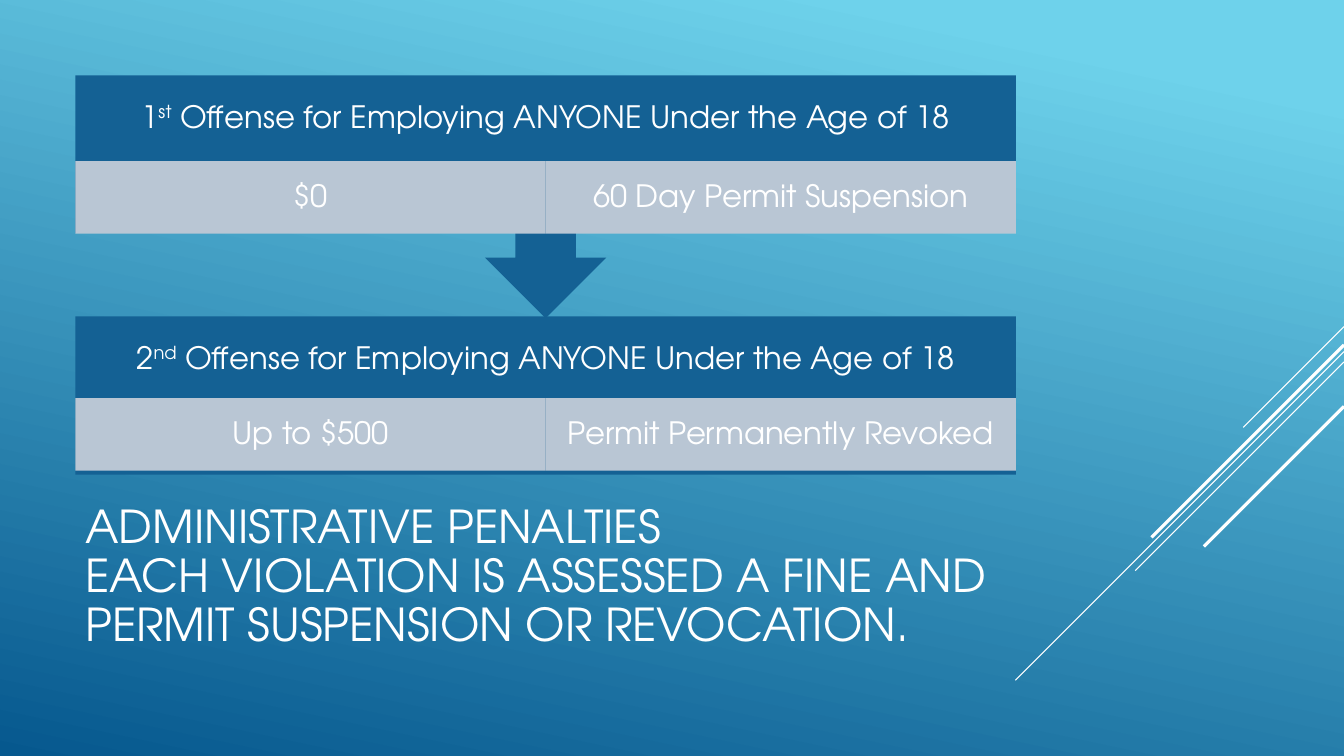
import pptx
import pptx.dml.color
import pptx.enum.shapes
import pptx.enum.text
import pptx.oxml
import pptx.oxml.ns
import pptx.util

Cm = pptx.util.Cm
Pt = pptx.util.Pt
SHAPE = pptx.enum.shapes.MSO_SHAPE
ALIGN = pptx.enum.text.PP_ALIGN
NAMESPACE = pptx.oxml.ns.nsdecls("a")


def color(value):
    return pptx.dml.color.RGBColor.from_string(value)


class PenaltySlide:
    FONT = "TeX Gyre Adventor"
    WHITE = "FFFFFF"
    BLUE = "146194"
    GRAY = "CCD2DC"
    WIDTH = 33.87
    HEIGHT = 19.05

    def __init__(self):
        self.deck = pptx.Presentation()
        self.deck.slide_width = Cm(self.WIDTH)
        self.deck.slide_height = Cm(self.HEIGHT)
        self.page = self.deck.slides.add_slide(self.deck.slide_layouts[6])

    def background(self, stops, angle):
        fill = self.page.background.fill
        fill.gradient()
        fill.gradient_angle = angle
        for stop, (position, value) in zip(fill.gradient_stops, stops):
            stop.position = position
            stop.color.rgb = color(value)

    def diagonal(self, top, reach, weight):
        """Draw a 45 degree line down and left from the right edge."""
        line = self.page.shapes.add_connector(
            pptx.enum.shapes.MSO_CONNECTOR.STRAIGHT,
            Cm(self.WIDTH), Cm(top), Cm(self.WIDTH - reach), Cm(top + reach))
        line.line.color.rgb = color(self.WHITE)
        line.line.width = Pt(weight)
        line._element.spPr.append(
            pptx.oxml.parse_xml(f"<a:effectLst {NAMESPACE}/>"))

    def panel(self, kind, left, top, width, height, fill, opacity=100):
        box = self.page.shapes.add_shape(
            kind, Cm(left), Cm(top), Cm(width), Cm(height))
        box.shadow.inherit = False
        box.line.fill.background()
        box.fill.solid()
        box.fill.fore_color.rgb = color(fill)
        if opacity < 100:
            tint = box._element.spPr.find(".//" + pptx.oxml.ns.qn("a:srgbClr"))
            tint.append(pptx.oxml.parse_xml(
                f'<a:alpha {NAMESPACE} val="{opacity * 1000}"/>'))
        return box

    def text_box(self, left, top, width, height):
        return self.page.shapes.add_textbox(
            Cm(left), Cm(top), Cm(width), Cm(height))

    def style_text(self, box, size, align, spacing, inset_x, inset_y):
        """Style the box's only paragraph and return it."""
        frame = box.text_frame
        frame.word_wrap = True
        frame.vertical_anchor = pptx.enum.text.MSO_ANCHOR.MIDDLE
        frame.margin_left = frame.margin_right = Cm(inset_x)
        frame.margin_top = frame.margin_bottom = Cm(inset_y)
        para = frame.paragraphs[0]
        para.alignment = align
        para.line_spacing = spacing
        para.font.name = self.FONT
        para.font.size = Pt(size)
        para.font.color.rgb = color(self.WHITE)
        return para

    def heading(self, left, top, width, height, number, ordinal):
        box = self.text_box(left, top, width, height)
        para = self.style_text(box, 22, ALIGN.CENTER, 0.9, 0.43, 0.43)
        para.add_run().text = number
        span = para.add_run()
        span.text = ordinal
        span._r.get_or_add_rPr().set("baseline", "30000")
        para.add_run().text = " Offense for Employing ANYONE Under the Age of 18"

    def penalties(self, left, top, width, height, labels):
        cell_width = width / len(labels)
        for column, label in enumerate(labels):
            cell = self.panel(SHAPE.RECTANGLE, left + column * cell_width, top,
                              cell_width, height, self.GRAY, 90)
            para = self.style_text(cell, 22, ALIGN.CENTER, 0.9, 0.43, 0.08)
            para.text = label

    def title(self, left, top, width, height, text):
        box = self.text_box(left, top, width, height)
        para = self.style_text(box, 32.4, ALIGN.LEFT, 0.9, 0.25, 0.13)
        para.text = text


def main():
    slide = PenaltySlide()
    left, width = 1.9, 23.7
    heading_height, cell_height = 2.16, 1.83

    # Background and diagonal accents
    slide.background([(0.1, "6ED2EB"), (1.0, "06588E")], 258)
    for top, reach, weight in [(8.23, 2.54, 0.75), (8.86, 8.28, 0.75),
                               (9.12, 5.26, 0.75), (8.69, 4.85, 2.25),
                               (10.24, 3.53, 2.25)]:
        slide.diagonal(top, reach, weight)

    # Title
    slide.title(left, 12.47, width, 4.19,
                "ADMINISTRATIVE PENALTIES\vEACH VIOLATION IS ASSESSED A FINE "
                "AND PERMIT SUSPENSION OR REVOCATION.")

    # Second offense
    slide.panel(SHAPE.RECTANGLE, left, 7.97, width, 3.99, slide.BLUE)
    slide.heading(left, 7.97, width, heading_height, "2", "nd")
    slide.penalties(left, 10.03, width, cell_height,
                    ["Up to $500", "Permit Permanently Revoked"])

    # First offense, with the arrow leading to the second
    callout = slide.panel(SHAPE.UP_ARROW_CALLOUT, left, 1.9, width, 6.12,
                          slide.BLUE)
    callout.rotation = 180
    slide.heading(left, 1.9, width, heading_height, "1", "st")
    slide.penalties(left, 4.06, width, cell_height,
                    ["$0", "60 Day Permit Suspension"])

    slide.deck.save("out.pptx")


if __name__ == "__main__":
    main()
